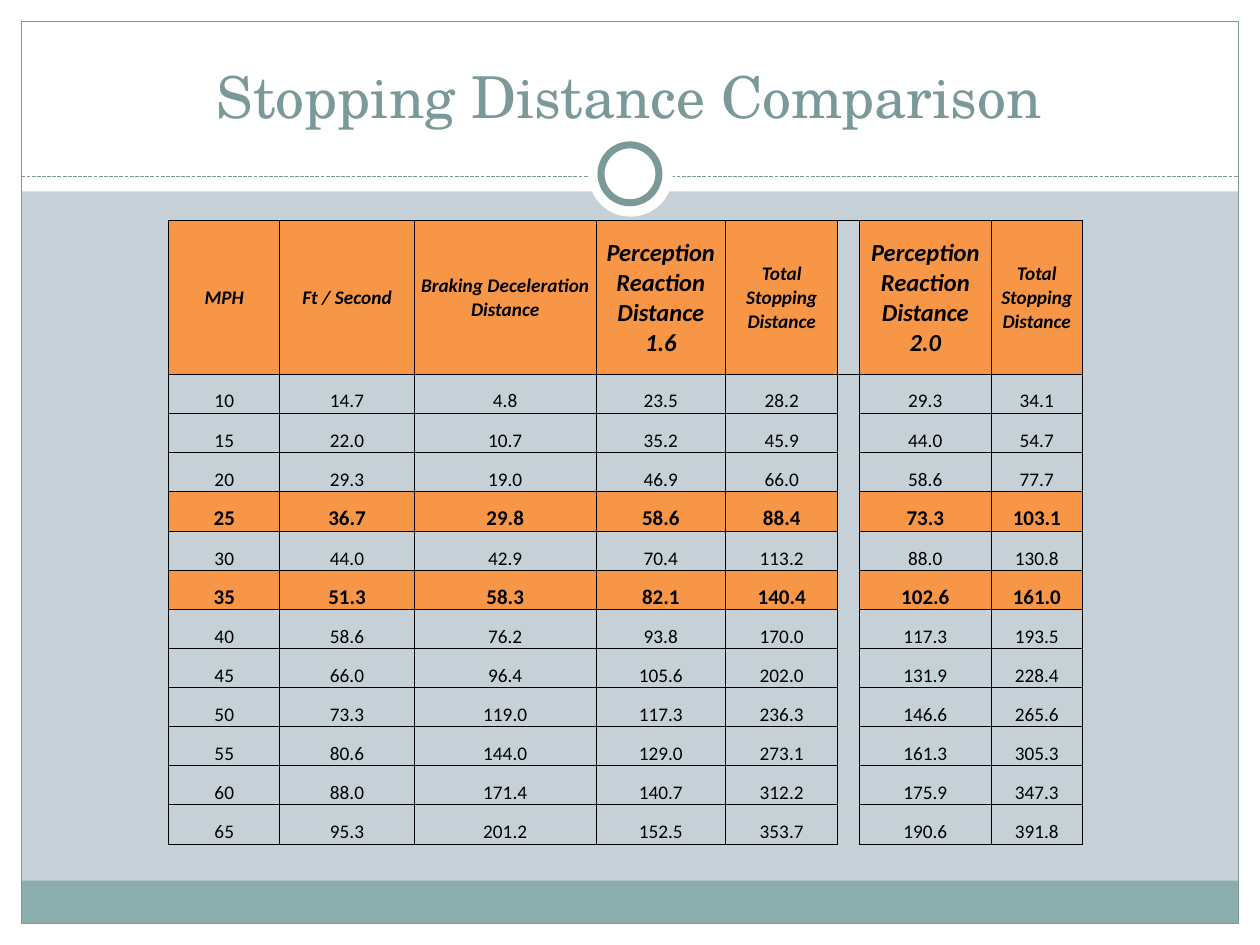
"""Build a slide comparing stopping distances at two reaction times."""
from lxml.etree import SubElement
from pptx import Presentation
from pptx.dml.color import RGBColor
from pptx.enum.dml import MSO_LINE
from pptx.enum.shapes import MSO_CONNECTOR, MSO_SHAPE
from pptx.enum.text import MSO_ANCHOR as ANCHOR, PP_ALIGN
from pptx.oxml.ns import qn
from pptx.util import Inches, Pt

WHITE = RGBColor(0xFF, 0xFF, 0xFF)
BLACK = RGBColor(0x00, 0x00, 0x00)
PALE = RGBColor(0xC5, 0xD1, 0xD7)
TEAL = RGBColor(0x8C, 0xAD, 0xAE)
SLATE = RGBColor(0x7C, 0x99, 0x9A)
ORANGE = RGBColor(0xF7, 0x96, 0x46)

prs = Presentation()
prs.slide_width, prs.slide_height = Inches(10), Inches(7.5)
COL, ROW = prs.slide_width / 10, prs.slide_height / 7.5
s = prs.slides.add_slide(prs.slide_layouts[6])
s.background.fill.solid()
s.background.fill.fore_color.rgb = PALE


def grid(x, y, w, h):
    return int(x * COL), int(y * ROW), int(w * COL), int(h * ROW)


def border(cell, sides):
    tcPr = cell._tc.get_or_add_tcPr()
    for i, side in enumerate("LRTB"):
        ln = tcPr.makeelement(qn(f"a:ln{side}"), {"w": str(Pt(0.5))})
        tcPr.insert(i, ln)
        if side in sides:
            SubElement(SubElement(ln, qn("a:solidFill")), qn("a:srgbClr"), val=str(BLACK))
        else:
            SubElement(ln, qn("a:noFill"))


RECT, OVAL = MSO_SHAPE.RECTANGLE, MSO_SHAPE.OVAL
for kind, place, fill, line, width in [
    (RECT, (0, 7.33, 10, 0.17), WHITE, None, 0),
    (RECT, (0, 0, 10, 1.52), WHITE, None, 0),
    (RECT, (0, 0, 0.17, 7.5), WHITE, None, 0),
    (RECT, (9.83, 0, 0.17, 7.5), WHITE, None, 0),
    (RECT, (0.17, 6.99, 9.66, 0.34), TEAL, None, 0),
    (RECT, (0.17, 0.17, 9.66, 7.16), None, SLATE, 0.75),
    (None, (0.17, 1.4, 9.66, 0), None, SLATE, 0.75),
    (OVAL, (4.67, 1.05, 0.67, 0.67), WHITE, None, 0),
    (OVAL, (4.77, 1.15, 0.46, 0.46), WHITE, SLATE, 4),
]:
    x, y, w, h = grid(*place)
    if kind is None:
        sp = s.shapes.add_connector(MSO_CONNECTOR.STRAIGHT, x, y, x + w, y + h)
        sp.line.dash_style = MSO_LINE.SQUARE_DOT
        SubElement(sp._element.spPr, qn("a:effectLst"))
    else:
        sp = s.shapes.add_shape(kind, x, y, w, h)
        sp.shadow.inherit = False
        if fill:
            sp.fill.solid()
            sp.fill.fore_color.rgb = fill
        else:
            sp.fill.background()
    if line:
        sp.line.color.rgb = line
        sp.line.width = Pt(width)
    else:
        sp.line.fill.background()

tf = s.shapes.add_textbox(*grid(0.33, 0.25, 9.33, 0.83)).text_frame
tf.word_wrap = True
tf.vertical_anchor = ANCHOR.BOTTOM
p = tf.paragraphs[0]
p.text = "Stopping Distance Comparison"
p.alignment = PP_ALIGN.CENTER
p.font.name, p.font.size = "TeX Gyre Schola", Pt(33)
p.font.color.rgb = SLATE

GAP = 5
WIDTHS = [0.88, 1.07, 1.44, 1.03, 0.89, 0.17, 1.05, 0.72]
HEIGHTS = [1.22] + [0.31] * 3 + [0.32] + [0.31] * 8
rows = [
    ["MPH", "Ft / Second", "Braking Deceleration Distance",
     "Perception Reaction Distance\v1.6", "Total Stopping Distance", "",
     "Perception Reaction Distance\v2.0", "Total Stopping Distance"],
    ["10", "14.7", "4.8", "23.5", "28.2", "", "29.3", "34.1"],
    ["15", "22.0", "10.7", "35.2", "45.9", "", "44.0", "54.7"],
    ["20", "29.3", "19.0", "46.9", "66.0", "", "58.6", "77.7"],
    ["25", "36.7", "29.8", "58.6", "88.4", "", "73.3", "103.1"],
    ["30", "44.0", "42.9", "70.4", "113.2", "", "88.0", "130.8"],
    ["35", "51.3", "58.3", "82.1", "140.4", "", "102.6", "161.0"],
    ["40", "58.6", "76.2", "93.8", "170.0", "", "117.3", "193.5"],
    ["45", "66.0", "96.4", "105.6", "202.0", "", "131.9", "228.4"],
    ["50", "73.3", "119.0", "117.3", "236.3", "", "146.6", "265.6"],
    ["55", "80.6", "144.0", "129.0", "273.1", "", "161.3", "305.3"],
    ["60", "88.0", "171.4", "140.7", "312.2", "", "175.9", "347.3"],
    ["65", "95.3", "201.2", "152.5", "353.7", "", "190.6", "391.8"],
]
place = grid(1.34, 1.75, sum(WIDTHS), sum(HEIGHTS))
table = s.shapes.add_table(len(rows), len(WIDTHS), *place).table
table.first_row = table.horz_banding = False
for column, width in zip(table.columns, WIDTHS):
    column.width = int(width * COL)
for row, height in zip(table.rows, HEIGHTS):
    row.height = int(height * ROW)

for i, values in enumerate(rows):
    header = i == 0
    strong = header or values[0] in ("25", "35")
    for j, value in enumerate(values):
        cell = table.cell(i, j)
        cell.margin_left = cell.margin_right = cell.margin_top = int(0.01 * COL)
        cell.margin_bottom = 0
        cell.vertical_anchor = ANCHOR.MIDDLE if header else ANCHOR.BOTTOM
        if strong and j != GAP:
            cell.fill.solid()
            cell.fill.fore_color.rgb = ORANGE
        else:
            cell.fill.background()
        p = cell.text_frame.paragraphs[0]
        p.text = value
        p.alignment = PP_ALIGN.CENTER
        p.font.name = "Calibri"
        p.font.size = Pt(14 if "\v" in value else 12 if strong and not header else 11)
        p.font.bold, p.font.italic = strong, header
        p.font.color.rgb = BLACK
        border(cell, "LRTB" if header or j != GAP else "LRT" if i == 1 else "LR")

prs.save("out.pptx")
